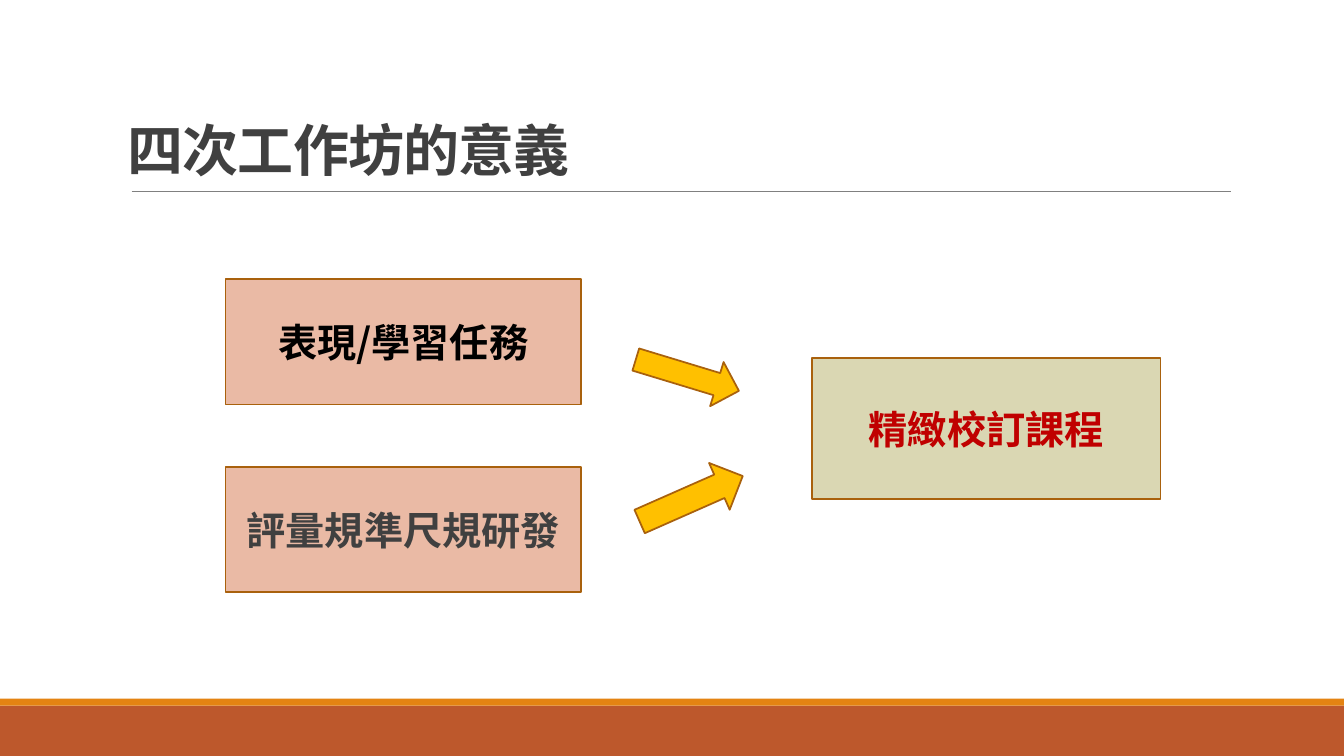
from lxml import etree
from pptx import Presentation
from pptx.dml.color import RGBColor
from pptx.enum.shapes import MSO_CONNECTOR as CONNECTOR, MSO_SHAPE as SHAPE
from pptx.enum.text import MSO_ANCHOR as ANCHOR, PP_ALIGN as ALIGN
from pptx.oxml.ns import qn
from pptx.util import Pt

FONT = "Noto Sans CJK SC"
WIDTH, HEIGHT = 960, 540
COLORS = {
    "footer": "BD582C", "stripe": "E48312", "rule": "808080",
    "task": "EABAA5", "result": "DAD7B3", "arrow": "FFC000", "outline": "A9610D",
    "text": "404040", "black": "000000", "red": "C00000",
}


def color(name):
    """Return the named colour."""
    return RGBColor.from_string(COLORS[name])


def add_block(slide, box, fill, outline=None, kind=SHAPE.RECTANGLE):
    """Draw a filled shape in the box, outlined if a colour is given."""
    shape = slide.shapes.add_shape(kind, *map(Pt, box))
    shape.shadow.inherit = False
    shape.fill.solid()
    shape.fill.fore_color.rgb = color(fill)
    if outline:
        shape.line.color.rgb = color(outline)
        shape.line.width = Pt(1.25)
    else:
        shape.line.fill.background()
    return shape


def write_text(shape, text, size, text_color, anchor, align):
    """Write one bold paragraph into the shape and return its font."""
    frame = shape.text_frame
    frame.word_wrap = True
    frame.vertical_anchor = anchor
    paragraph = frame.paragraphs[0]
    paragraph.text = text
    paragraph.alignment = align
    font = paragraph.font
    font.name, font.size, font.bold = FONT, Pt(size), True
    font.color.rgb = color(text_color)
    etree.SubElement(font._element, qn("a:ea"), typeface=FONT)
    return font


def add_footer(slide, left, top, width, height):
    """Draw the bottom band with its thin stripe on top."""
    stripe = 5
    add_block(slide, (left, top + stripe, width, height - stripe), "footer")
    add_block(slide, (left, top, width, stripe), "stripe")


def add_title(slide, left, top, width, height):
    """Write the heading at the bottom of the box and rule a line below."""
    title = slide.shapes.add_textbox(*map(Pt, (left, top, width, height)))
    font = write_text(title, "四次工作坊的意義", 40, "text", ANCHOR.BOTTOM, ALIGN.LEFT)
    font._element.set("spc", "-50")
    title.text_frame.paragraphs[0].line_spacing = 0.85

    rule_left, rule_top = left + 10, top + height + 2
    rule = slide.shapes.add_connector(
        CONNECTOR.STRAIGHT, Pt(rule_left), Pt(rule_top), Pt(rule_left + 785), Pt(rule_top))
    rule.line.color.rgb = color("rule")
    rule.line.width = Pt(0.5)
    etree.SubElement(rule._element.spPr, qn("a:effectLst"))


def add_diagram(slide, left, top):
    """Draw two task boxes whose arrows lead to the result box."""
    boxes = (
        ("表現/學習任務", (0, 0, 254, 89.5), "task", "black"),
        ("評量規準尺規研發", (0, 134, 254, 89.5), "task", "text"),
        ("精緻校訂課程", (419, 56, 249, 101), "result", "red"),
    )
    for text, (x, y, width, height), fill, text_color in boxes:
        shape = add_block(slide, (left + x, top + y, width, height), fill, "outline")
        write_text(shape, text, 28, text_color, ANCHOR.MIDDLE, ALIGN.CENTER)

    arrows = (((291.5, 52, 77, 33), 16.9), ((292.5, 138.5, 80.5, 36.5), -23.8))
    for (x, y, width, height), angle in arrows:
        arrow = add_block(slide, (left + x, top + y, width, height),
                          "arrow", "outline", SHAPE.RIGHT_ARROW)
        arrow.rotation = angle


def main():
    """Build and save the slide."""
    presentation = Presentation()
    presentation.slide_width, presentation.slide_height = Pt(WIDTH), Pt(HEIGHT)
    slide = presentation.slides.add_slide(presentation.slide_layouts[6])
    add_footer(slide, 0, HEIGHT - 41, WIDTH, 41)
    add_title(slide, 84, 30, 772, 104.5)
    add_diagram(slide, 161, 199.5)
    presentation.save("out.pptx")


if __name__ == "__main__":
    main()
